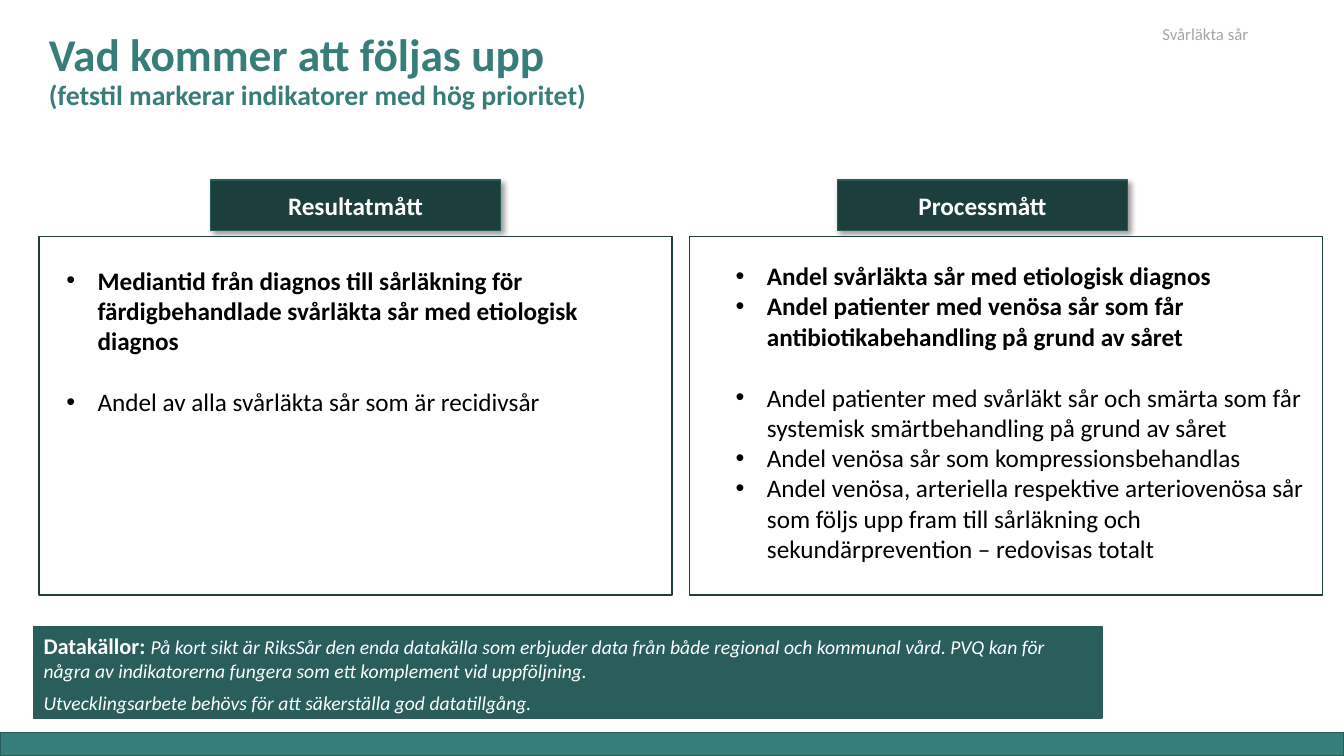
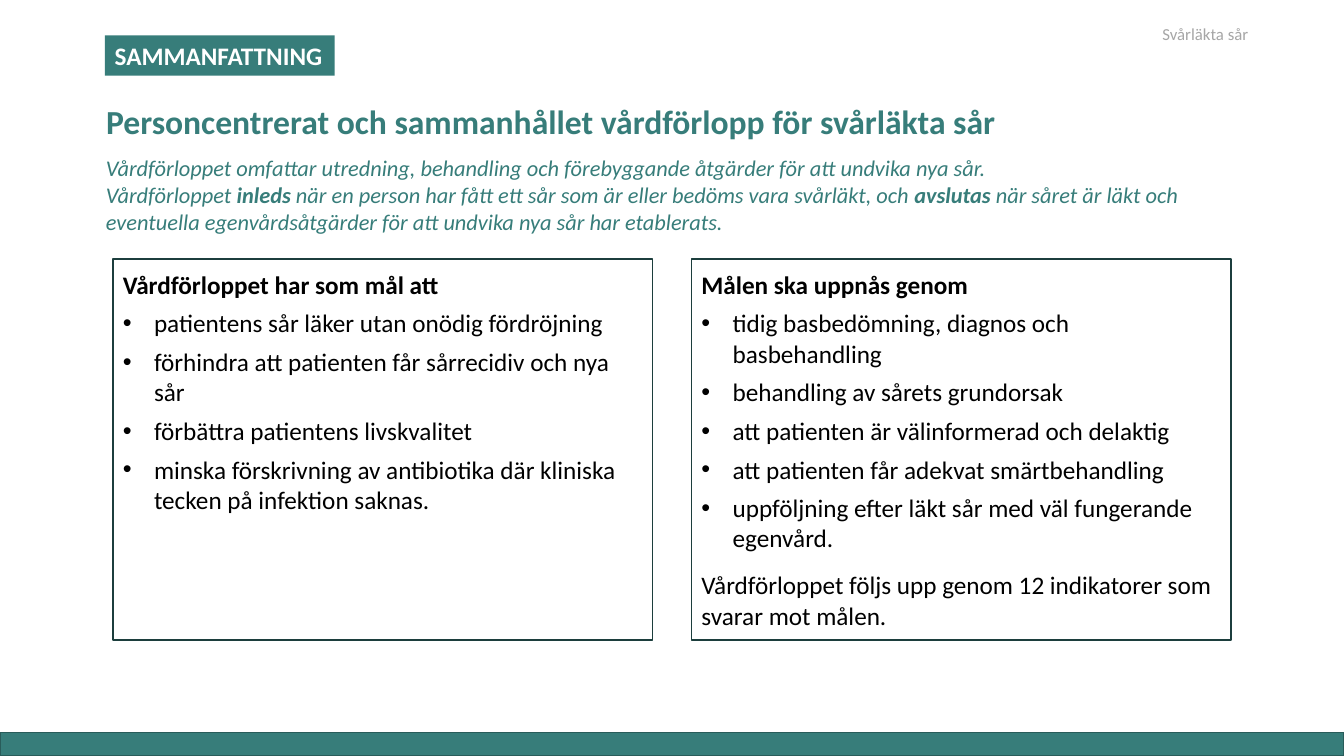
from lxml import etree
from pptx import Presentation
from pptx.dml.color import RGBColor
from pptx.enum.shapes import MSO_SHAPE
from pptx.enum.text import MSO_ANCHOR, PP_ALIGN
from pptx.oxml import parse_xml
from pptx.oxml.ns import nsdecls, qn
from pptx.util import Inches, Pt

TEAL = RGBColor(0x37, 0x7D, 0x7A)
TEAL_EDGE = RGBColor(0x29, 0x5C, 0x5A)
TEAL_DEEP = RGBColor(0x29, 0x5E, 0x5C)
TEAL_DARK = RGBColor(0x1C, 0x3E, 0x3D)
GREY = RGBColor(0xA6, 0xA6, 0xA6)
WHITE = RGBColor(0xFF, 0xFF, 0xFF)
BLACK = RGBColor(0, 0, 0)

FONT = "Calibri"
BOLD = {"bold": True}
ITALIC = {"italic": True}
BOLD_ITALIC = {"bold": True, "italic": True}
TITLE = {"line_spacing": 0.9}
BULLET = {"bullet": True}
SPACED = {"space_before": Pt(6)}
SPACED_BULLET = {"bullet": True, "space_before": Pt(6)}
AFTER_GAP = {"bullet": True, "space_before": Pt(22)}

prs = Presentation()
prs.slide_width, prs.slide_height = Inches(13.33), Inches(7.5)
COL = prs.slide_width / 100
ROW = prs.slide_height / 100


def add_box(slide, left, top, width, height, fill=None, edge=None):
    """Place a text box, or a rectangle if filled, in percent of the slide."""
    area = int(left * COL), int(top * ROW), int(width * COL), int(height * ROW)
    if fill is None:
        box = slide.shapes.add_textbox(*area)
    else:
        box = slide.shapes.add_shape(MSO_SHAPE.RECTANGLE, *area)
        box.shadow.inherit = False
        box.fill.solid()
        box.fill.fore_color.rgb = fill
        if edge is None:
            box.line.fill.background()
        else:
            box.line.color.rgb = edge
            box.line.width = Pt(1)
    box.text_frame.word_wrap = True
    box.text_frame.vertical_anchor = MSO_ANCHOR.TOP
    return box


def write(box, color, size, paragraphs):
    """Fill a box with (paragraph format, (text, font format), ...) rows."""
    frame = box.text_frame
    for index, (layout, *pieces) in enumerate(paragraphs):
        paragraph = frame.add_paragraph() if index else frame.paragraphs[0]
        paragraph.alignment = PP_ALIGN.LEFT
        for key, value in layout.items():
            if key != "bullet":
                setattr(paragraph, key, value)
        if "bullet" in layout:
            properties = paragraph._p.get_or_add_pPr()
            properties.set("marL", str(Inches(0.31)))
            properties.set("indent", str(-Inches(0.31)))
            etree.SubElement(properties, qn("a:buFont")).set("typeface", "Arial")
            etree.SubElement(properties, qn("a:buChar")).set("char", "•")
        for text, style in pieces:
            run = paragraph.add_run()
            run.text = text
            run.font.color.rgb = color
            for key, value in {"name": FONT, "size": Pt(size), **style}.items():
                setattr(run.font, key, value)


# Bottom band and topic shared by all slides
follow_up, summary = [prs.slides.add_slide(prs.slide_layouts[6]) for _ in range(2)]
for slide in (follow_up, summary):
    add_box(slide, 0, 96.9, 100, 3.1, TEAL, TEAL_EDGE)
    write(add_box(slide, 85.75, 2.5, 12.8, 4), GREY, 12, [({}, ("Svårläkta sår", {}))])

# Slide 1: what will be followed up
heading = add_box(follow_up, 2.9, 6.5, 75, 8.9)
heading.text_frame.vertical_anchor = MSO_ANCHOR.BOTTOM
write(heading, TEAL, 32.4, [
    (TITLE, ("Vad kommer att följas upp", BOLD)),
    (TITLE, ("(fetstil markerar indikatorer med hög prioritet)",
             {"bold": True, "size": Pt(19.8)})),
])

measures = [
    ("Resultatmått", 2.9, 15.65, (4.2, 34.4, 44.4, 21.6), [
        (BULLET, ("Mediantid från diagnos till sårläkning för färdigbehandlade "
                  "svårläkta sår med etiologisk diagnos", BOLD)),
        (AFTER_GAP, ("Andel av alla svårläkta sår som är recidivsår", {})),
    ]),
    ("Processmått", 51.3, 62.3, (54, 33.8, 44.4, 41.7), [
        (BULLET, ("Andel svårläkta sår med etiologisk diagnos", BOLD)),
        (BULLET, ("Andel patienter med venösa sår som får "
                  "antibiotikabehandling på grund av såret", BOLD)),
        (AFTER_GAP, ("Andel patienter med svårläkt sår och smärta som får "
                     "systemisk smärtbehandling på grund av såret", {})),
        (BULLET, ("Andel venösa sår som kompressionsbehandlas", {})),
        (BULLET, ("Andel venösa, arteriella respektive arteriovenösa sår som följs "
                  "upp fram till sårläkning och sekundärprevention – redovisas "
                  "totalt", {})),
    ]),
]
for measure, panel_left, label_left, list_area, indicators in measures:
    label = add_box(follow_up, label_left, 23.8, 21.6, 6.7, TEAL_DARK, TEAL_EDGE)
    label.text_frame.vertical_anchor = MSO_ANCHOR.MIDDLE
    label._element.spPr.find(qn("a:effectLst")).append(parse_xml(
        f'<a:outerShdw {nsdecls("a")} blurRad="{Pt(4)}" dist="{Pt(3)}" dir="2700000" '
        'algn="tl" rotWithShape="0"><a:srgbClr val="000000"><a:alpha val="40000"/>'
        '</a:srgbClr></a:outerShdw>'))
    write(label, WHITE, 18, [({"alignment": PP_ALIGN.CENTER}, (measure, BOLD))])
    add_box(follow_up, panel_left, 31.3, 47.1, 47.4, WHITE, TEAL_DARK)
    write(add_box(follow_up, *list_area), BLACK, 18, indicators)

sources = add_box(follow_up, 2.5, 82.9, 79.5, 12.1, TEAL_DEEP, TEAL_EDGE)
write(sources, WHITE, 14, [
    ({}, ("Datakällor: ", {"bold": True, "size": Pt(16)}),
     ("På kort sikt är RiksSår den enda datakälla som erbjuder data från både "
      "regional och kommunal vård. PVQ kan för några av indikatorerna fungera som "
      "ett komplement vid uppföljning.", ITALIC)),
    (SPACED, ("Utvecklingsarbete behövs för att säkerställa god datatillgång.", ITALIC)),
])

# Slide 2: summary
heading = add_box(summary, 7.15, 5.7, 78.1, 13.7)
heading.text_frame.vertical_anchor = MSO_ANCHOR.BOTTOM
write(heading, TEAL, 24, [
    (TITLE, ("Personcentrerat och sammanhållet vårdförlopp för svårläkta sår", BOLD)),
])

goals = [
    (8.4, "Vårdförloppet har som mål att", [
        "patientens sår läker utan onödig fördröjning",
        "förhindra att patienten får sårrecidiv och nya sår",
        "förbättra patientens livskvalitet",
        "minska förskrivning av antibiotika där kliniska tecken på infektion saknas.",
    ], []),
    (51.45, "Målen ska uppnås genom", [
        "tidig basbedömning, diagnos och basbehandling",
        "behandling av sårets grundorsak",
        "att patienten är välinformerad och delaktig",
        "att patienten får adekvat smärtbehandling",
        "uppföljning efter läkt sår med väl fungerande egenvård.",
    ], [
        ({"space_before": Pt(12)},
         ("Vårdförloppet följs upp genom 12 indikatorer som svarar mot målen.", {})),
    ]),
]
for left, lead, points, closing in goals:
    panel = add_box(summary, left, 34.25, 40.15, 50.4, WHITE, TEAL_DARK)
    panel.text_frame.margin_top = Inches(0.1)
    bullets = [(SPACED_BULLET, (point, {})) for point in points]
    write(panel, BLACK, 18, [({}, (lead, BOLD)), *bullets, *closing])

write(add_box(summary, 7.15, 19.7, 84.5, 12.1), TEAL, 16, [
    ({}, ("Vårdförloppet omfattar utredning, behandling och förebyggande åtgärder "
          "för att undvika nya sår.", ITALIC)),
    ({}, ("Vårdförloppet ", ITALIC),
     ("inleds", BOLD_ITALIC),
     (" när en person har fått ett sår som är eller bedöms vara svårläkt, och ", ITALIC),
     ("avslutas", BOLD_ITALIC),
     (" när såret är läkt och eventuella egenvårdsåtgärder för att undvika nya sår "
      "har etablerats.", ITALIC)),
])

badge = add_box(summary, 7.8, 4.7, 17.1, 5.3, TEAL)
badge.text_frame.word_wrap = False
write(badge, WHITE, 18, [({}, ("SAMMANFATTNING", BOLD))])

prs.save("out.pptx")
